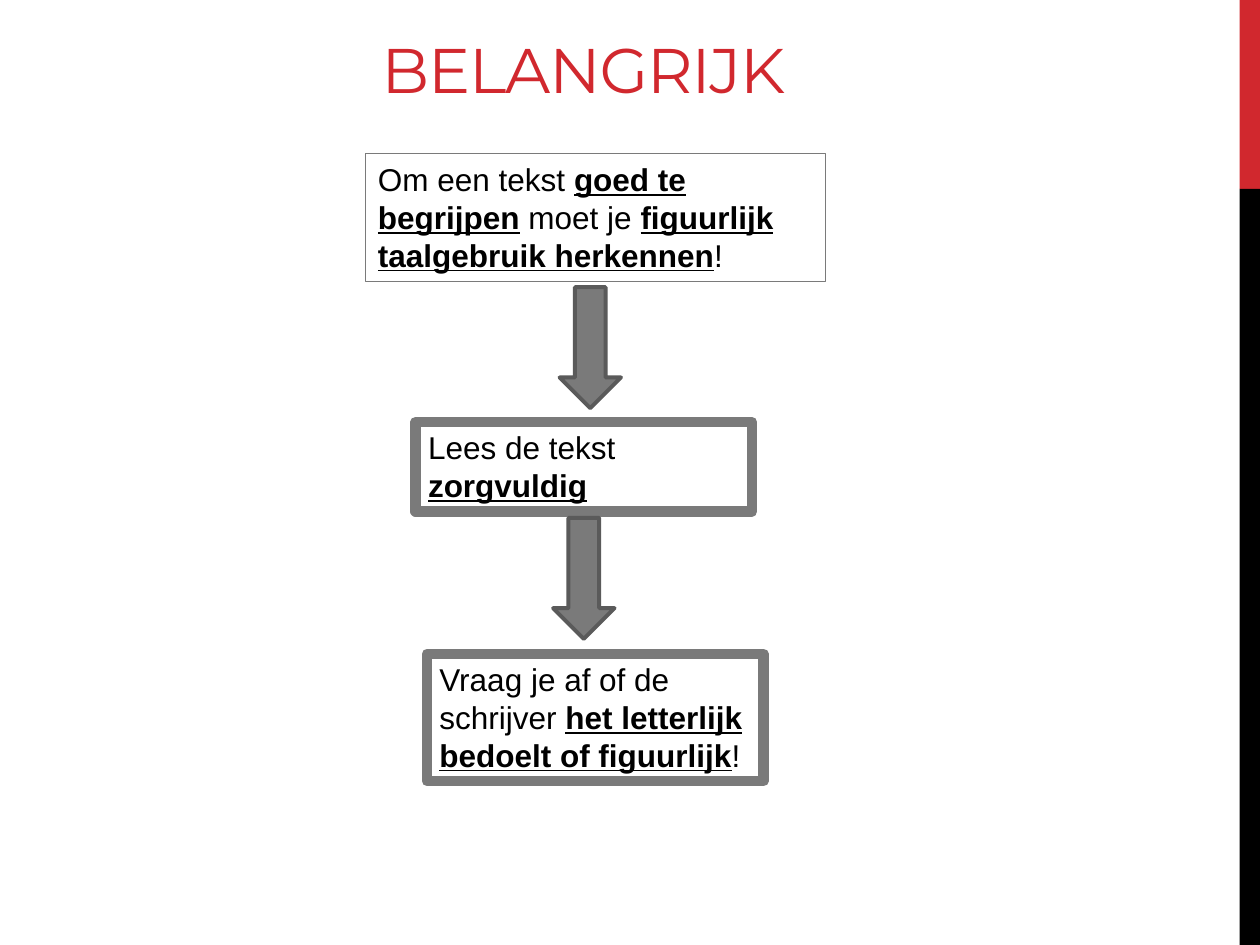
from pptx import Presentation
from pptx.dml.color import RGBColor
from pptx.enum.shapes import MSO_SHAPE as Shape
from pptx.enum.text import MSO_ANCHOR as Anchor, MSO_AUTO_SIZE as AutoSize, PP_ALIGN as Align
from pptx.util import Cm, Pt

COLORS = {"red": "D1282E", "black": "000000", "gray": "7A7A7A", "dark_gray": "5A5A5A"}
SLIDE_WIDTH, SLIDE_HEIGHT = 25.4, 19.05

# Steps from top to bottom: box in cm, line width in points, (text, emphasised) runs
STEPS = [
    ((7.37, 3.1, 9.27, 2.57), 0.75, [
        ("Om een tekst ", False), ("goed te begrijpen", True), (" moet je ", False),
        ("figuurlijk taalgebruik herkennen", True), ("!", False)]),
    ((8.38, 8.51, 6.78, 1.8), 6, [
        ("Lees de tekst ", False), ("zorgvuldig", True)]),
    ((8.61, 13.18, 6.78, 2.57), 6, [
        ("Vraag je af of de schrijver ", False),
        ("het letterlijk bedoelt of figuurlijk", True), ("!", False)]),
]
ARROWS = [(11.28, 5.79, 1.24, 2.44), (11.15, 10.44, 1.24, 2.44)]


def color(name):
    return RGBColor.from_string(COLORS[name])


def add_shape(slide, kind, box, fill=None, line=None, line_width=0):
    shape = slide.shapes.add_shape(kind, *map(Cm, box))
    shape.shadow.inherit = False
    if fill:
        shape.fill.solid()
        shape.fill.fore_color.rgb = color(fill)
    else:
        shape.fill.background()
    if line:
        shape.line.color.rgb = color(line)
        shape.line.width = Pt(line_width)
    else:
        shape.line.fill.background()
    return shape


def add_run(paragraph, text, font, size, color_name, emphasis=False):
    run = paragraph.add_run()
    run.text = text
    run.font.name = font
    run.font.size = Pt(size)
    run.font.color.rgb = color(color_name)
    run.font.bold = run.font.underline = emphasis
    return run


def add_sidebar(slide, box):
    left, top, width, height = box
    red_height = height / 5
    add_shape(slide, Shape.RECTANGLE, (left, top, width, red_height), "red")
    add_shape(slide, Shape.RECTANGLE,
              (left, top + red_height, width, height - red_height), "black")


def add_title(slide, box):
    frame = slide.shapes.add_textbox(*map(Cm, box)).text_frame
    frame.word_wrap = True
    frame.vertical_anchor = Anchor.BOTTOM
    paragraph = frame.paragraphs[0]
    paragraph.alignment = Align.CENTER
    run = add_run(paragraph, "BELANGRIJK", "Montserrat", 36, "red")
    run.font._element.set("spc", "-60")  # letter spacing in 1/100 pt


def add_step(slide, box, line_width, runs):
    shape = add_shape(slide, Shape.RECTANGLE, box, None, "gray", line_width)
    frame = shape.text_frame
    frame.word_wrap = True
    frame.auto_size = AutoSize.SHAPE_TO_FIT_TEXT
    frame.vertical_anchor = Anchor.TOP
    paragraph = frame.paragraphs[0]
    paragraph.alignment = Align.LEFT
    for text, emphasis in runs:
        add_run(paragraph, text, "Arial", 18, "black", emphasis)


def add_arrow(slide, box):
    add_shape(slide, Shape.DOWN_ARROW, box, "gray", "dark_gray", 2.25)


def main():
    presentation = Presentation()
    presentation.slide_width, presentation.slide_height = Cm(SLIDE_WIDTH), Cm(SLIDE_HEIGHT)
    slide = presentation.slides.add_slide(presentation.slide_layouts[6])

    # Sidebar and title
    add_sidebar(slide, (24.99, 0, 0.41, SLIDE_HEIGHT))
    add_title(slide, (0.33, 0.2, 22.86, 2.06))

    # Flow of steps
    for box, line_width, runs in STEPS:
        add_step(slide, box, line_width, runs)
    for box in ARROWS:
        add_arrow(slide, box)

    presentation.save("out.pptx")


if __name__ == "__main__":
    main()
